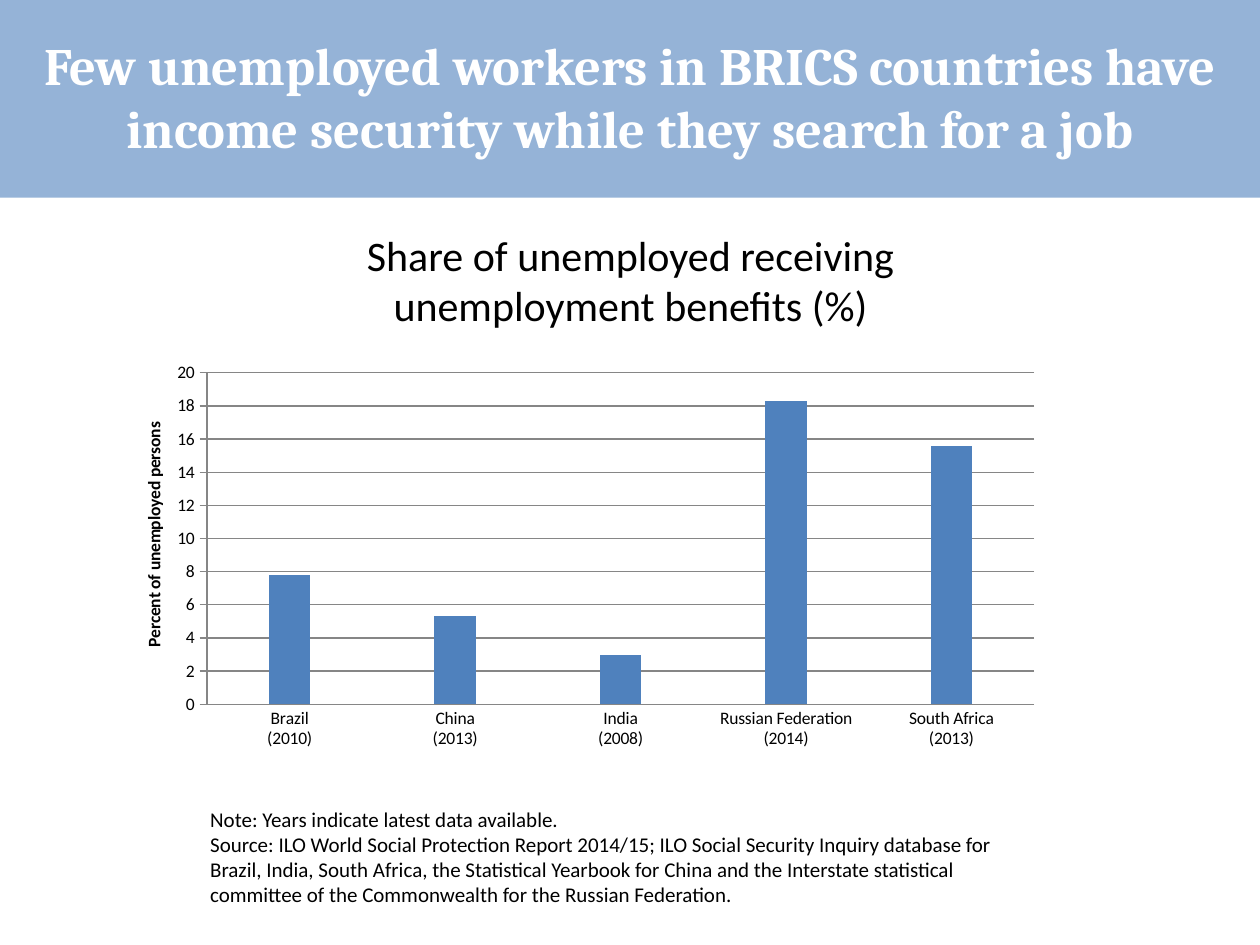
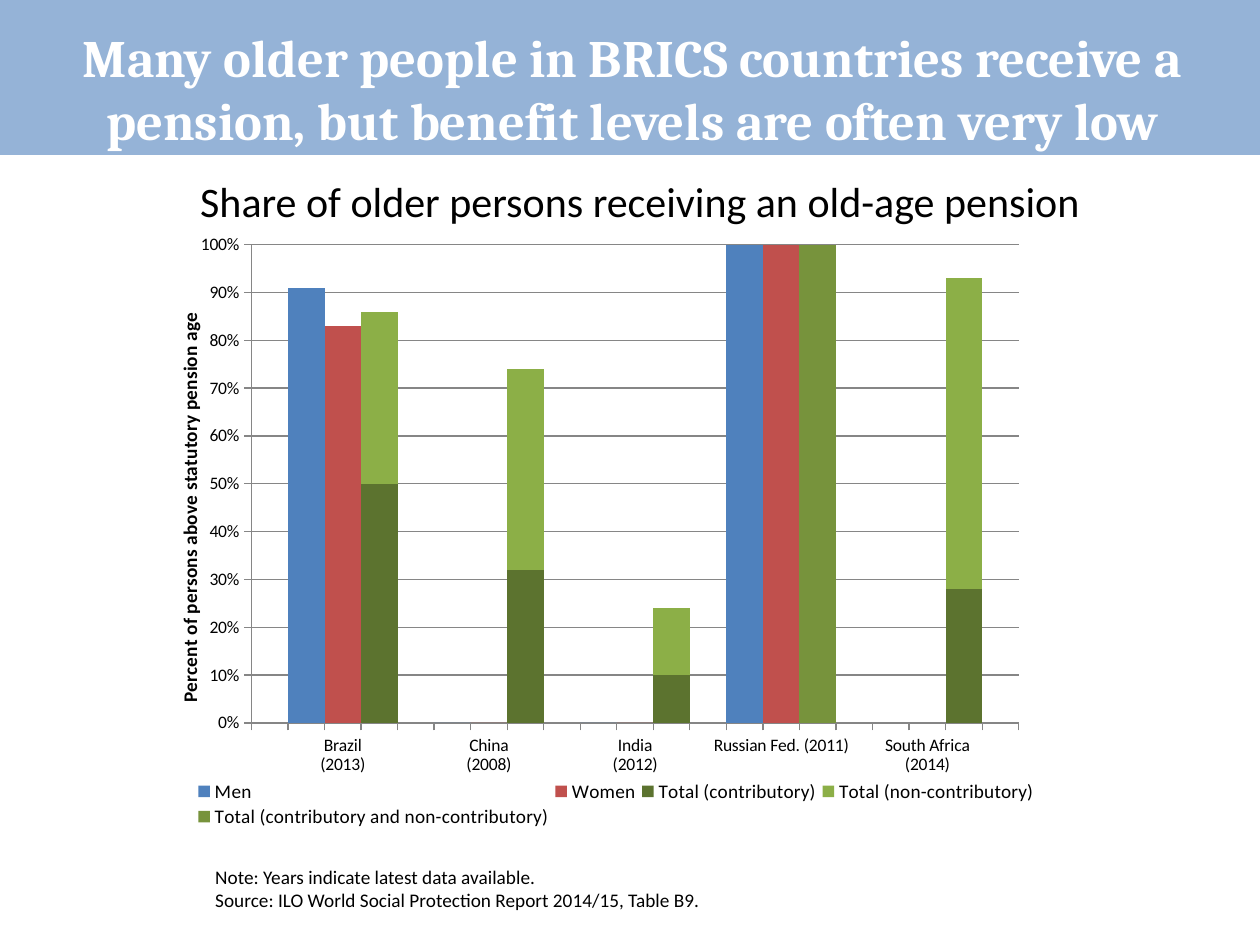
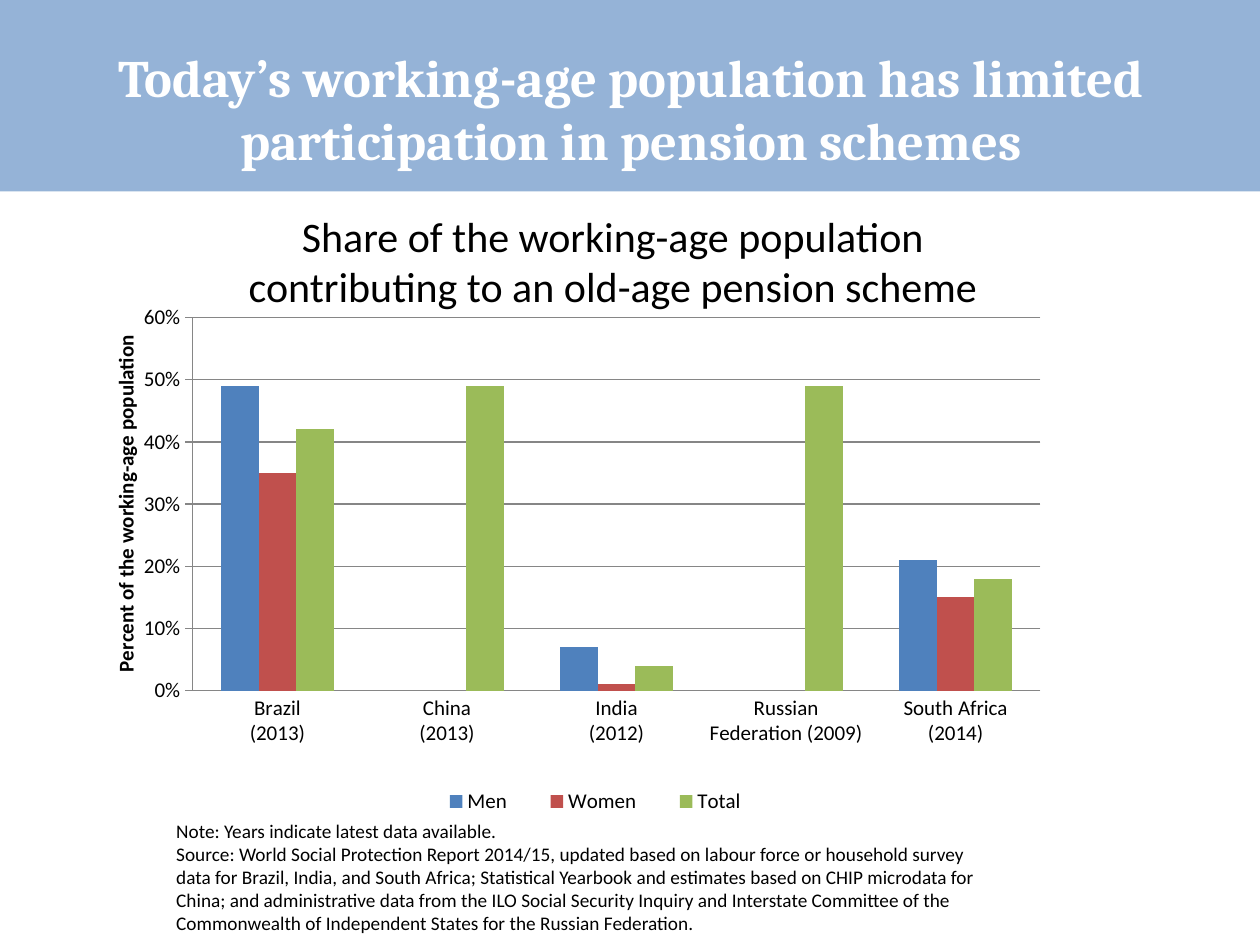
from pptx import Presentation, util as u
from pptx.chart.data import CategoryChartData
from pptx.dml.color import RGBColor
from pptx.enum import chart as ch, shapes, text
from pptx.oxml import parse_xml
from pptx.oxml.ns import nsdecls, qn

WIDTH, HEIGHT = 10, 7.5
BAND, WHITE, BLACK, GRID = "95B3D7", "FFFFFF", "000000", "868686"
MEN, WOMEN, TOTAL = "4F81BD", "C0504D", "9BBB59"
CONTRIBUTORY, NON_CONTRIBUTORY, BOTH = "5C732F", "8CAF47", "77933C"
YEARS_NOTE = "Note: Years indicate latest data available."

# Label, men, women, total contributory, total non-contributory
PENSIONERS = [
    ("Brazil\n(2013)", 0.91, 0.83, 0.5, 0.36),
    ("China\n(2008)", 0, 0, 0.32, 0.42),
    ("India\n(2012)", 0, 0, 0.1, 0.14),
    ("Russian Fed. (2011)", 1, 1, 1, None),
    ("South Africa\n(2014)", None, None, 0.28, 0.65),
]
GROUP = 4  # three bars and a gap for each country
SLOTS = GROUP * len(PENSIONERS) + 1


def spread(field, first_slot, blank=None):
    """Place one field of every country in its slot on the category axis."""
    slots = [blank] * SLOTS
    slots[first_slot::GROUP] = [country[field] for country in PENSIONERS][:len(slots[first_slot::GROUP])]
    return slots


SLIDES = [
    dict(
        title="Few unemployed workers in BRICS countries have income security while they search for a job",
        title_at=(0, 0.21, 10, 1.11), band_height=1.57,
        heading=["Share of unemployed receiving", "unemployment benefits (%)"],
        heading_at=(1.52, 1.77, 6.97, 0.91),
        notes=[YEARS_NOTE,
               "Source: ILO World Social Protection Report 2014/15; ILO Social Security Inquiry database for "
               "Brazil, India, South Africa, the Statistical Yearbook for China and the Interstate statistical "
               "committee of the Commonwealth for the Russian Federation."],
        notes_at=(1.57, 6.35, 6.54, 0.91), notes_size=12,
        chart=dict(
            at=(0.67, 2.81, 7.91, 4.81), plot=(0.123, 0.031, 0.83, 0.547), gap=300, size=10,
            axis_title="Percent of unemployed persons", axis_title_at=(0.055, 0.107),
            categories=["Brazil\n(2010)", "China\n(2013)", "India\n(2008)",
                        "Russian Federation\n(2014)", "South Africa\n(2013)"],
            series=[("Series 1", MEN, [7.8, 5.3, 3, 18.3, 15.6])], number_format="General"),
    ),
    dict(
        title="Many older people in BRICS countries receive a pension, but benefit levels are often very low",
        title_at=(0.04, 0.14, 9.96, 1.11), band_height=1.23,
        heading=["Share of older persons receiving an old-age pension"],
        heading_at=(0.83, 1.34, 8.5, 0.5),
        notes=[YEARS_NOTE, "Source: ILO World Social Protection Report 2014/15, Table B9."],
        notes_at=(1.61, 6.82, 4.96, 0.47), notes_size=11,
        chart=dict(
            at=(1.3, 1.85, 7.4, 5.15), plot=(0.094, 0.018, 0.823, 0.737), gap=0, size=10,
            axis_title="Percent of persons above statutory pension age", axis_title_at=(0.01, 0.117),
            axis_title_size=11, stacked=True, maximum=1,
            legend=(0.03, 0.84, 0.91, 0.08), legend_size=11,
            categories=spread(0, 2, ""),
            series=[("Men", MEN, spread(1, 1)),
                    ("Women", WOMEN, spread(2, 2)),
                    ("Total (contributory)", CONTRIBUTORY, spread(3, 3)),
                    ("Total (non-contributory)", NON_CONTRIBUTORY, spread(4, 3)),
                    ("Total (contributory and non-contributory)", BOTH, [None] * SLOTS)],
            point_colours=[(2, 15, BOTH)]),
    ),
    dict(
        title="Today’s working-age population has limited participation in pension schemes",
        title_at=(0, 0.3, 10.02, 1.11), band_height=1.52,
        heading=["Share of the working-age population", "contributing to an old-age pension scheme"],
        heading_at=(1.38, 1.62, 6.97, 0.91),
        notes=[YEARS_NOTE,
               "Source: World Social Protection Report 2014/15, updated based on labour force or household survey "
               "data for Brazil, India, and South Africa; Statistical Yearbook and estimates based on CHIP "
               "microdata for China; and administrative data from the ILO Social Security Inquiry and Interstate "
               "Committee of the Commonwealth of Independent States for the Russian Federation."],
        notes_at=(1.3, 6.45, 6.69, 1.03), notes_size=11,
        chart=dict(
            at=(0.63, 2.41, 8.03, 4.44), plot=(0.112, 0.025, 0.838, 0.667), gap=150, size=12,
            axis_title="Percent of the working-age population", axis_title_at=(0.028, 0.05),
            legend=(0.33, 0.86, 0.36, 0.06), legend_side="RIGHT", wrap_labels=True,
            categories=["Brazil\n(2013)", "China\n(2013)", "India\n(2012)",
                        "Russian Federation (2009)", "South Africa\n(2014)"],
            series=[("Men", MEN, [0.49, None, 0.07, None, 0.21]),
                    ("Women", WOMEN, [0.35, None, 0.01, None, 0.15]),
                    ("Total", TOTAL, [0.42, 0.49, 0.04, 0.49, 0.18])]),
    ),
]


def inches(lengths):
    return [u.Inches(length) for length in lengths]


def rgb(colour):
    return RGBColor.from_string(colour)


def paint(fill, colour):
    fill.solid()
    fill.fore_color.rgb = rgb(colour)


def set_font(font, size, colour=BLACK, name="Calibri", bold=False):
    font.size, font.name, font.bold = u.Pt(size), name, bold
    font.color.rgb = rgb(colour)


def write(frame, paragraphs, align="LEFT", anchor="TOP", **font):
    frame.word_wrap = True
    frame.auto_size = text.MSO_AUTO_SIZE.NONE
    frame.vertical_anchor = getattr(text.MSO_ANCHOR, anchor)
    for number, words in enumerate(paragraphs):
        paragraph = frame.add_paragraph() if number else frame.paragraphs[0]
        paragraph.alignment = getattr(text.PP_ALIGN, align)
        run = paragraph.add_run()
        run.text = words
        set_font(run.font, **font)


def add_title(slide, words, at, band_height):
    """Put the title on a band that spans the slide."""
    title = slide.shapes.title
    title.left, title.top, title.width, title.height = inches(at)
    write(title.text_frame, [words], align="CENTER", anchor="MIDDLE",
          size=30, colour=WHITE, name="Cambria", bold=True)
    band = slide.shapes.add_shape(shapes.MSO_SHAPE.RECTANGLE, *inches((0, 0, WIDTH, band_height)))
    band.shadow.inherit = False
    paint(band.fill, BAND)
    band.line.fill.background()
    title._element.addprevious(band._element)


def add_text(slide, paragraphs, at, **form):
    write(slide.shapes.add_textbox(*inches(at)).text_frame, paragraphs, **form)


def place(part, shares, inner=False):
    """Fix a chart part at shares of the chart's size."""
    for old in part.findall(qn("c:layout")):
        part.remove(old)
    target = '<c:layoutTarget val="inner"/>' if inner else ""
    modes = '<c:xMode val="edge"/><c:yMode val="edge"/>'
    values = "".join(f'<c:{side} val="{share}"/>' for side, share in zip("xywh", shares))
    layout = parse_xml(f'<c:layout {nsdecls("c")}><c:manualLayout>{target}{modes}{values}'
                       '</c:manualLayout></c:layout>')
    overlay = part.find(qn("c:overlay"))
    if overlay is None:
        part.insert(0, layout)
    else:
        overlay.addprevious(layout)


def add_chart(slide, at, plot, gap, size, axis_title, axis_title_at, categories, series,
              axis_title_size=None, stacked=False, maximum=None, legend=None, legend_size=None,
              legend_side="BOTTOM", wrap_labels=False, number_format="0%", point_colours=()):
    data = CategoryChartData()
    data.categories = categories
    for name, _, values in series:
        data.add_series(name, values)
    kind = ch.XL_CHART_TYPE.COLUMN_STACKED if stacked else ch.XL_CHART_TYPE.COLUMN_CLUSTERED
    chart = slide.shapes.add_chart(kind, *inches(at), data).chart
    chart.has_title = False
    set_font(chart.font, size)

    columns = chart.plots[0]
    columns.vary_by_categories = False
    columns.gap_width = gap
    columns.overlap = 100 if stacked else 0
    for drawn, (_, colour, _) in zip(columns.series, series):
        drawn.invert_if_negative = False
        paint(drawn.format.fill, colour)
    for number, slot, colour in point_colours:
        paint(columns.series[number].points[slot].format.fill, colour)
    place(chart._chartSpace.chart.plotArea, plot, inner=True)

    countries, percent = chart.category_axis, chart.value_axis
    countries.has_major_gridlines = False
    countries.major_tick_mark = ch.XL_TICK_MARK.OUTSIDE if stacked else ch.XL_TICK_MARK.NONE
    percent.has_major_gridlines = True
    percent.major_tick_mark = ch.XL_TICK_MARK.OUTSIDE
    percent.minimum_scale = 0
    if maximum:
        percent.maximum_scale = maximum
    percent.tick_labels.number_format = number_format
    percent.tick_labels.number_format_is_linked = False
    for axis in (countries, percent):
        set_font(axis.tick_labels.font, size)
    for ruled in (countries, percent, percent.major_gridlines):
        ruled.format.line.color.rgb = rgb(GRID)
        ruled.format.line.width = u.Pt(0.75)
    if wrap_labels:
        countries._element.find(qn("c:txPr")).find(qn("a:bodyPr")).set("rot", "0")

    write_axis_title = percent.axis_title.text_frame.paragraphs[0].add_run()
    write_axis_title.text = axis_title
    set_font(write_axis_title.font, axis_title_size or size, bold=True)
    place(percent.axis_title._element, axis_title_at)

    chart.has_legend = legend is not None
    if legend:
        chart.legend.position = getattr(ch.XL_LEGEND_POSITION, legend_side)
        chart.legend.include_in_layout = False
        set_font(chart.legend.font, legend_size or size)
        place(chart.legend._element, legend)


def main():
    deck = Presentation()
    deck.slide_width, deck.slide_height = inches((WIDTH, HEIGHT))
    title_only = deck.slide_layouts[5]
    for content in SLIDES:
        slide = deck.slides.add_slide(title_only)
        add_title(slide, content["title"], content["title_at"], content["band_height"])
        add_text(slide, content["heading"], content["heading_at"], align="CENTER", size=24)
        add_chart(slide, **content["chart"])
        add_text(slide, content["notes"], content["notes_at"], size=content["notes_size"])
    deck.save("out.pptx")


if __name__ == "__main__":
    main()
